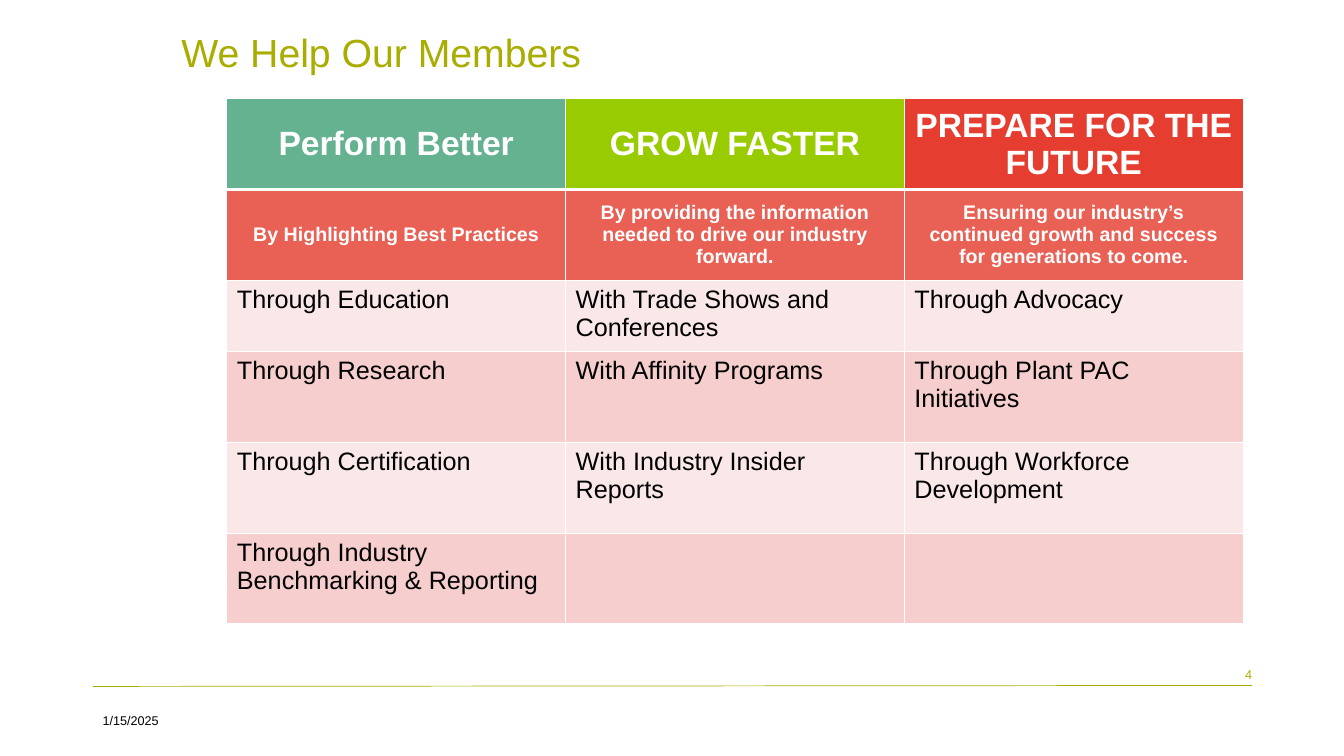
from lxml import etree
from pptx import Presentation
from pptx.dml.color import RGBColor
from pptx.enum.shapes import MSO_CONNECTOR
from pptx.enum.text import MSO_ANCHOR, PP_ALIGN
from pptx.oxml.ns import qn
from pptx.util import Inches, Pt

STRAIGHT = MSO_CONNECTOR.STRAIGHT
TOP, MIDDLE = MSO_ANCHOR.TOP, MSO_ANCHOR.MIDDLE
LEFT, CENTER, RIGHT = PP_ALIGN.LEFT, PP_ALIGN.CENTER, PP_ALIGN.RIGHT

FONT = "Arial"
COLORS = {
    "olive": "A9AD00",
    "white": "FFFFFF",
    "black": "000000",
    "teal": "64B28F",
    "green": "99CC00",
    "red": "E53E30",
    "coral": "E96055",
    "pale": "FAE8E8",
    "pink": "F5CECD",
}

HEADINGS = ["Perform Better", "GROW FASTER", "PREPARE FOR THE FUTURE"]
HEADING_FILLS = ["teal", "green", "red"]
PROMISES = [
    "By Highlighting Best Practices",
    "By providing the information needed to drive our industry forward.",
    "Ensuring our industry’s continued growth and success for generations to come.",
]
SERVICES = [
    ["Through Education", "With Trade Shows and Conferences", "Through Advocacy"],
    ["Through Research", "With Affinity Programs", "Through Plant PAC Initiatives"],
    ["Through Certification", "With Industry Insider Reports",
     "Through Workforce Development"],
    ["Through Industry Benchmarking & Reporting", "", ""],
]
COLUMN_WIDTH = 3.36
ROW_HEIGHTS = [0.9, 0.9, 0.71, 0.9, 0.9, 0.9]


def rgb(name):
    return RGBColor.from_string(COLORS[name])


def style_paragraph(paragraph, size, color, align=LEFT, bold=False):
    paragraph.alignment = align
    font = paragraph.font
    for target in [font] + [run.font for run in paragraph.runs]:
        target.name = FONT
        target.size = Pt(size)
        target.bold = bold
        target.color.rgb = rgb(color)


def add_label(slide, text, left, top, width, height, size, color,
              align=LEFT, anchor=MIDDLE, side_margin=0.1, line_spacing=1.0):
    box = slide.shapes.add_textbox(Inches(left), Inches(top),
                                   Inches(width), Inches(height))
    frame = box.text_frame
    frame.word_wrap = True
    frame.vertical_anchor = anchor
    frame.margin_left = frame.margin_right = Inches(side_margin)
    frame.text = text
    frame.paragraphs[0].line_spacing = line_spacing
    style_paragraph(frame.paragraphs[0], size, color, align)


def add_rule(slide, start, end, color, weight):
    rule = slide.shapes.add_connector(STRAIGHT, *map(Inches, start + end))
    rule.line.color.rgb = rgb(color)
    rule.line.width = Pt(weight)
    etree.SubElement(rule._element.spPr, qn("a:effectLst"))


def set_borders(cell, top=1, bottom=1):
    properties = cell._tc.get_or_add_tcPr()
    weights = {"a:lnL": 1, "a:lnR": 1, "a:lnT": top, "a:lnB": bottom}
    # Borders come before the fill in the cell properties
    for index, (tag, weight) in enumerate(weights.items()):
        border = etree.Element(qn(tag), w=str(Pt(weight)))
        fill = etree.SubElement(border, qn("a:solidFill"))
        etree.SubElement(fill, qn("a:srgbClr"), val=COLORS["white"])
        properties.insert(index, border)


def fill_cell(cell, text, fill, size, color, align=LEFT, anchor=TOP, bold=False):
    cell.text = text
    cell.vertical_anchor = anchor
    cell.fill.solid()
    cell.fill.fore_color.rgb = rgb(fill)
    style_paragraph(cell.text_frame.paragraphs[0], size, color, align, bold)


def add_benefits_table(slide):
    rows, columns = len(ROW_HEIGHTS), len(HEADINGS)
    benefits = slide.shapes.add_table(
        rows, columns, Inches(2.25), Inches(0.98),
        Inches(COLUMN_WIDTH * columns), Inches(sum(ROW_HEIGHTS))).table
    for column in benefits.columns:
        column.width = Inches(COLUMN_WIDTH)
    for row, height in zip(benefits.rows, ROW_HEIGHTS):
        row.height = Inches(height)

    for c in range(columns):
        # Heading and promise
        fill_cell(benefits.cell(0, c), HEADINGS[c], HEADING_FILLS[c],
                  24, "white", CENTER, MIDDLE, True)
        fill_cell(benefits.cell(1, c), PROMISES[c], "coral",
                  14, "white", CENTER, MIDDLE, True)
        # Services in alternating bands
        for r, services in enumerate(SERVICES):
            fill_cell(benefits.cell(r + 2, c), services[c],
                      ("pale", "pink")[r % 2], 18, "black")
        # White grid, heavier under the headings
        for r in range(rows):
            set_borders(benefits.cell(r, c), top=3 if r == 1 else 1,
                        bottom=3 if r == 0 else 1)


def main():
    prs = Presentation()
    prs.slide_width, prs.slide_height = Inches(13.33), Inches(7.5)
    slide = prs.slides.add_slide(prs.slide_layouts[6])

    # Footer rule
    add_rule(slide, (0.92, 6.81), (12.42, 6.8), "olive", 0.5)

    add_benefits_table(slide)

    # Date, page number and title
    add_label(slide, "1/15/2025", 0.92, 6.95, 3, 0.4, 9, "black")
    add_label(slide, "4", 9.42, 6.49, 3, 0.4, 9, "olive", RIGHT, side_margin=0)
    add_label(slide, "We Help Our Members", 1.7, 0.28, 10.61, 0.7, 28, "olive",
              anchor=TOP, line_spacing=0.9)

    prs.save("out.pptx")


if __name__ == "__main__":
    main()
